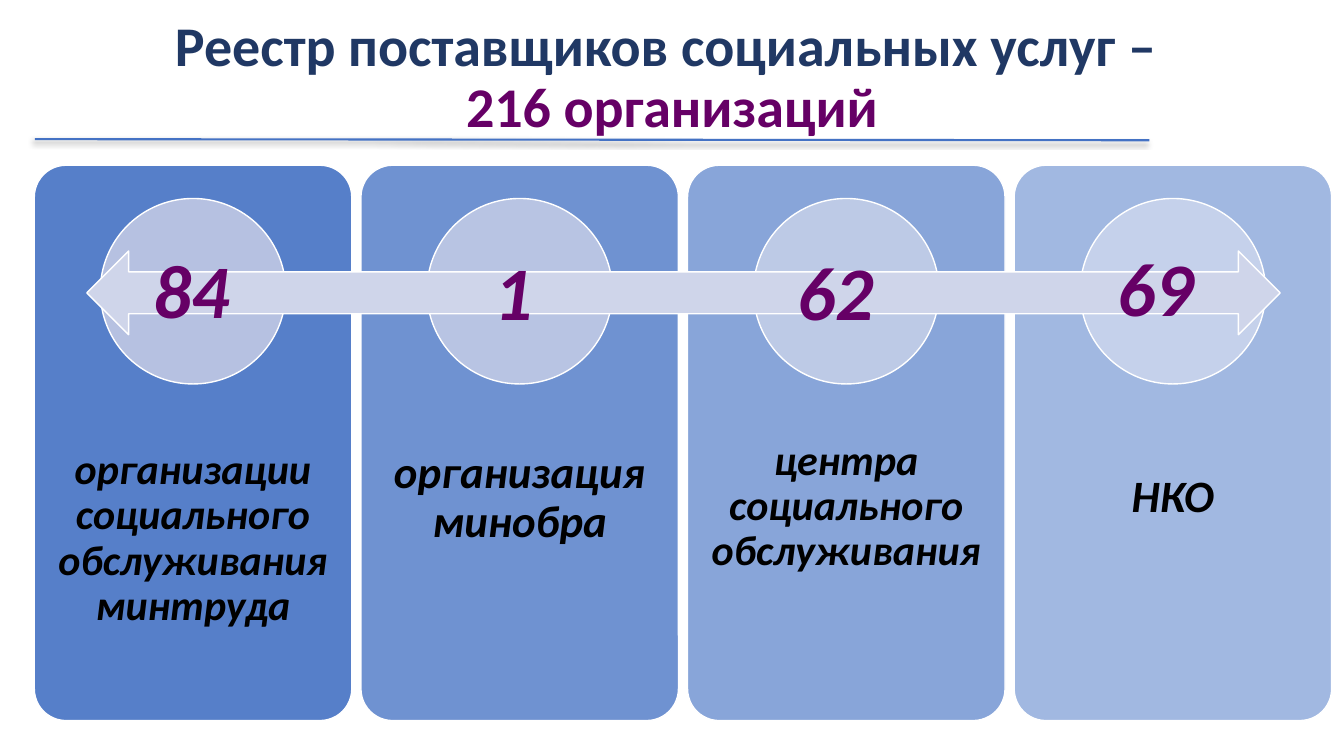
from dataclasses import dataclass
from lxml.etree import SubElement
from pptx import Presentation
from pptx.dml.color import RGBColor
from pptx.enum.shapes import MSO_CONNECTOR, MSO_SHAPE
from pptx.enum.text import MSO_ANCHOR, PP_ALIGN
from pptx.oxml.ns import qn
from pptx.util import Pt

COLORS = {
    "navy": "203864",
    "purple": "660066",
    "blue": "4472C4",
    "arrow": "CFD5EA",
    "white": "FFFFFF",
    "black": "000000",
}
FONT = "Calibri"
CARD_LEFT, CARD_TOP, CARD_W, CARD_H, CARD_STEP = 24.5, 118, 226.8, 396.7, 233.3
CIRCLE_TOP, CIRCLE_D = 141.8, 132.5
LABEL_H, LABEL_INSET = 159, 10
NUMBER_W, NUMBER_H = 90, 72.7


@dataclass
class Provider:
    number: str
    label: str
    size: float
    label_mid: float
    number_mid: float
    number_top: float
    circle: str
    alpha: int


PROVIDERS = [
    Provider("84", "организации социального обслуживания минтруда", 30, 385, 137, 170, "C1C9E4", 90),
    Provider("1", "организация минобра", 32, 356, 367, 171.4, "CED4E9", 77),
    Provider("62", "центра социального обслуживания", 30, 362, 597, 171.4, "DCE0EF", 63),
    Provider("69", "НКО", 32, 356, 825.5, 168.5, "E9EBF5", 50),
]


def add_box(s, kind: MSO_SHAPE, x: float, y: float, w: float, h: float, fill: str, alpha: int = 100):
    sp = s.shapes.add_shape(kind, Pt(x), Pt(y), Pt(w), Pt(h))
    sp.shadow.inherit = False
    sp.fill.solid()
    sp.fill.fore_color.rgb = RGBColor.from_string(fill)
    if alpha < 100:
        clr = sp._element.spPr.find(qn("a:solidFill"))[0]
        SubElement(clr, qn("a:alpha"), val=str(alpha * 1000))
    sp.line.color.rgb = RGBColor.from_string(COLORS["white"])
    sp.line.width = Pt(1)
    return sp


def add_run(p, text: str, size: float, color: str, italic: bool) -> None:
    r = p.add_run()
    r.text = text
    r.font.name = FONT
    r.font.size = Pt(size)
    r.font.bold = True
    r.font.italic = italic
    r.font.color.rgb = RGBColor.from_string(COLORS[color])


def add_text(s, x: float, y: float, w: float, h: float, anchor: MSO_ANCHOR,
             spacing: float, inset: float = 7.2):
    tf = s.shapes.add_textbox(Pt(x), Pt(y), Pt(w), Pt(h)).text_frame
    tf.word_wrap = True
    tf.vertical_anchor = anchor
    tf.margin_left = tf.margin_right = Pt(inset)
    tf.margin_top = tf.margin_bottom = Pt(3.6)
    p = tf.paragraphs[0]
    p.alignment = PP_ALIGN.CENTER
    p.line_spacing = spacing
    return p


def add_title(s) -> None:
    p = add_text(s, 66, 28.8, 828, 55.4, MSO_ANCHOR.MIDDLE, 0.9)
    add_run(p, "Реестр поставщиков социальных услуг – ", 40, "navy", False)
    p.add_line_break()
    add_run(p, "216 организаций", 40, "purple", False)


def add_rule(s) -> None:
    line = s.shapes.add_connector(MSO_CONNECTOR.STRAIGHT, Pt(25), Pt(99.4), Pt(821), Pt(100.2))
    line.line.color.rgb = RGBColor.from_string(COLORS["blue"])
    line.line.width = Pt(1.5)
    effects = SubElement(line._element.spPr, qn("a:effectLst"))
    shadow = SubElement(effects, qn("a:outerShdw"), blurRad=str(Pt(4)), dist=str(Pt(3)),
                        dir="8100000", algn="tr", rotWithShape="0")
    clr = SubElement(shadow, qn("a:srgbClr"), val=COLORS["black"])
    SubElement(clr, qn("a:alpha"), val="40000")


def add_provider(s, i: int, item: Provider) -> None:
    x = CARD_LEFT + i * CARD_STEP
    card = add_box(s, MSO_SHAPE.ROUNDED_RECTANGLE, x, CARD_TOP, CARD_W, CARD_H,
                   COLORS["blue"], item.alpha)
    card.adjustments[0] = 0.1
    p = add_text(s, x, item.label_mid - LABEL_H / 2, CARD_W, LABEL_H,
                 MSO_ANCHOR.MIDDLE, 0.9, LABEL_INSET)
    add_run(p, item.label, item.size, "black", True)
    add_box(s, MSO_SHAPE.OVAL, x + (CARD_W - CIRCLE_D) / 2, CIRCLE_TOP, CIRCLE_D, CIRCLE_D,
            item.circle, item.alpha)


def add_number(s, item: Provider) -> None:
    p = add_text(s, item.number_mid - NUMBER_W / 2, item.number_top, NUMBER_W, NUMBER_H,
                 MSO_ANCHOR.TOP, 1.0)
    add_run(p, item.number, 54, "purple", True)


def main() -> None:
    prs = Presentation()
    prs.slide_width, prs.slide_height = Pt(960), Pt(540)
    s = prs.slides.add_slide(prs.slide_layouts[6])
    add_title(s)
    add_rule(s)
    for i, item in enumerate(PROVIDERS):
        add_provider(s, i, item)
    add_box(s, MSO_SHAPE.LEFT_RIGHT_ARROW, 62, 179.3, 852.5, 59.8, COLORS["arrow"])
    for item in PROVIDERS:
        add_number(s, item)
    prs.save("out.pptx")


if __name__ == "__main__":
    main()
